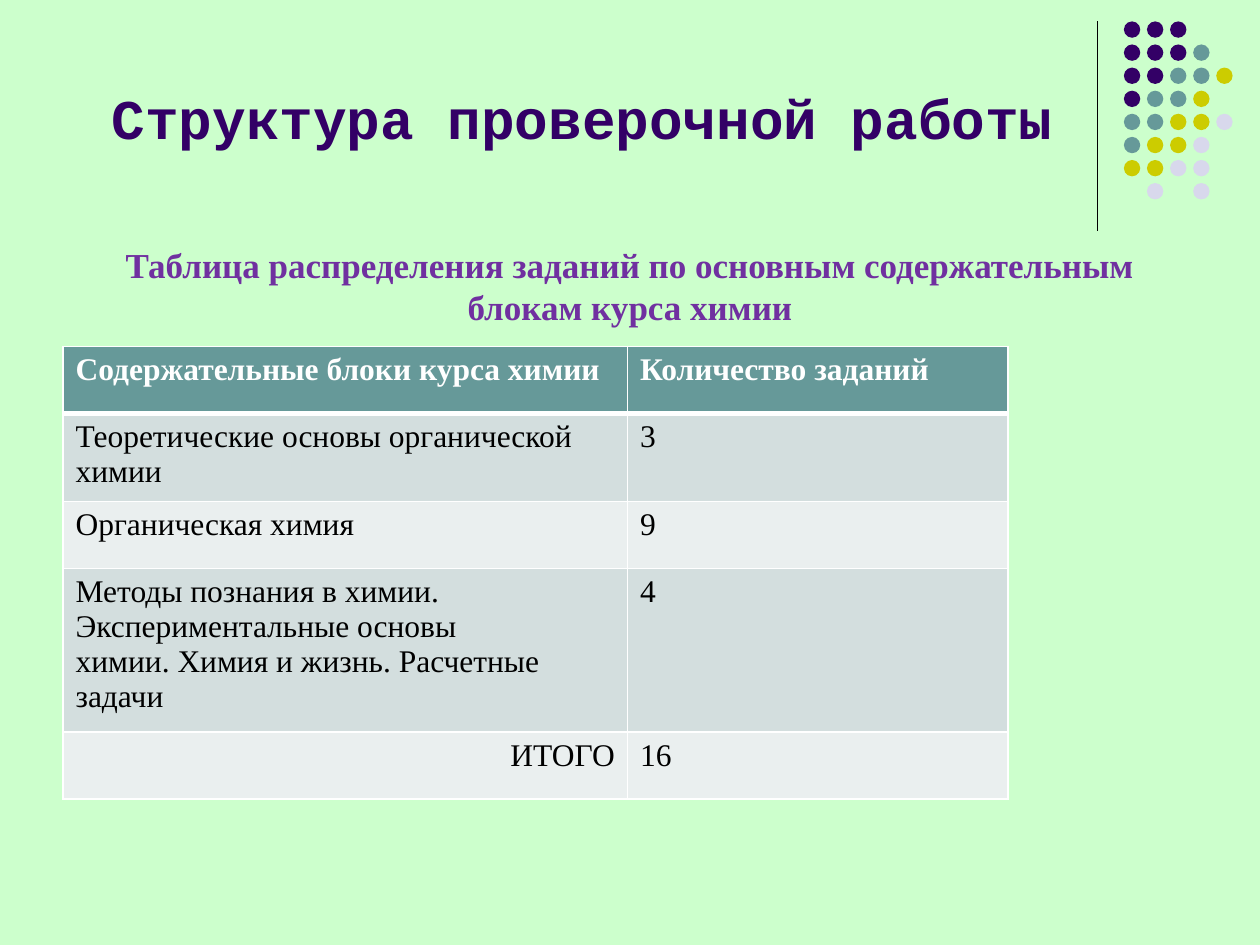
from lxml.etree import SubElement
from pptx import Presentation
from pptx.dml.color import RGBColor
from pptx.enum.shapes import MSO_CONNECTOR, MSO_SHAPE
from pptx.enum.text import MSO_ANCHOR as ANCHOR, MSO_AUTO_SIZE as AUTO, PP_ALIGN as AL
from pptx.oxml.ns import qn
from pptx.util import Inches, Pt

COLORS = {
    "bg": "CCFFCC", "title": "330066", "subtitle": "7030A0", "text": "000000",
    "white": "FFFFFF", "header": "669999", "band_dark": "D3DEDE", "band_light": "EAEFEF",
    "P": "330066", "T": "669999", "Y": "CCCC00", "L": "D8D8EC",
}
DOTS = ["PPP", "PPPT", "PPTTY", "PTTY", "TTYYL", "TYYL", "YYLL", " L L"]
DOT_PITCH = 0.55 / 3
ROWS = [
    ("Содержательные блоки курса химии", "Количество заданий"),
    ("Теоретические основы органической химии", "3"),
    ("Органическая химия", "9"),
    ("Методы познания в химии. Экспериментальные основы\n"
     "химии. Химия и жизнь. Расчетные задачи", "4"),
    ("ИТОГО", "16"),
]


def rgb(name):
    return RGBColor.from_string(COLORS[name])


def write(tf, text, font="Times New Roman", size=18, color="text", bold=False,
          align=AL.LEFT, before=0):
    tf.word_wrap = True
    for i, line in enumerate(text.split("\n")):
        p = tf.paragraphs[0] if i == 0 else tf.add_paragraph()
        p.alignment = align
        p.space_before = Pt(before)
        r = p.add_run()
        r.text = line
        r.font.name, r.font.size, r.font.bold = font, Pt(size), bold
        r.font.color.rgb = rgb(color)


def set_borders(cell, widths):
    tc_pr = cell._tc.get_or_add_tcPr()
    for side, width in widths.items():
        ln = SubElement(tc_pr, qn(f"a:ln{side}"), w=str(Pt(width)))
        fill = SubElement(ln, qn("a:solidFill"))
        SubElement(fill, qn("a:srgbClr"), val=COLORS["white"])


class SlideBuilder:
    def __init__(self, prs):
        self.s = prs.slides.add_slide(prs.slide_layouts[5])
        self.s.background.fill.solid()
        self.s.background.fill.fore_color.rgb = rgb("bg")

    def title(self, text, x, y, w, h):
        sp = self.s.shapes.title
        sp.left, sp.top, sp.width, sp.height = map(Inches, (x, y, w, h))
        sp.text_frame.auto_size = AUTO.NONE
        sp.text_frame.vertical_anchor = ANCHOR.BOTTOM
        write(sp.text_frame, text, font="Courier New", size=32, color="title",
              bold=True, align=AL.CENTER)

    def text(self, text, x, y, w, h, **fmt):
        sp = self.s.shapes.add_textbox(*map(Inches, (x, y, w, h)))
        write(sp.text_frame, text, **fmt)

    def line(self, x1, y1, x2, y2, width=0.75):
        ln = self.s.shapes.add_connector(
            MSO_CONNECTOR.STRAIGHT, *map(Inches, (x1, y1, x2, y2)))
        ln.line.width = Pt(width)
        ln.line.color.rgb = rgb("text")
        SubElement(ln._element.spPr, qn("a:effectLst"))

    def dots(self, x, y, size):
        group = self.s.shapes.add_group_shape()
        for j, row in enumerate(DOTS):
            for i, key in enumerate(row):
                if key == " ":
                    continue
                sp = group.shapes.add_shape(
                    MSO_SHAPE.OVAL, Inches(x + i * DOT_PITCH), Inches(y + j * DOT_PITCH),
                    Inches(size), Inches(size))
                sp.shadow.inherit = False
                sp.fill.solid()
                sp.fill.fore_color.rgb = rgb(key)
                sp.line.fill.background()

    def table(self, rows, x, y, col_widths, row_height):
        table = self.s.shapes.add_table(
            len(rows), len(col_widths), Inches(x), Inches(y),
            Inches(sum(col_widths)), Inches(row_height * len(rows))).table
        for col, width in zip(table.columns, col_widths):
            col.width = Inches(width)
        for i, row in enumerate(rows):
            table.rows[i].height = Inches(row_height)
            head = i == 0
            fill = "header" if head else "band_dark" if i % 2 else "band_light"
            for j, text in enumerate(row):
                cell = table.cell(i, j)
                set_borders(cell, {"L": 1, "R": 1, "T": 3 if i == 1 else 1, "B": 3 if head else 1})
                cell.fill.solid()
                cell.fill.fore_color.rgb = rgb(fill)
                total = i == len(rows) - 1 and j == 0
                write(cell.text_frame, text, color="white" if head else "text",
                      bold=head, align=AL.RIGHT if total else AL.LEFT)


def main():
    prs = Presentation()
    prs.slide_width, prs.slide_height = Inches(10), Inches(7.5)
    slide = SlideBuilder(prs)
    slide.line(8.71, 0.17, 8.71, 1.83)
    slide.dots(8.92, 0.17, 0.13)
    slide.title("Структура проверочной работы", 0.5, 0.13, 8.25, 1.12)
    slide.text("Таблица распределения заданий по основным содержательным блокам курса химии",
               0.5, 1.88, 9, 4.82, size=20, color="subtitle", bold=True,
               align=AL.CENTER, before=4)
    slide.table(ROWS, 0.5, 2.75, (4.48, 3.02), 0.53)
    prs.save("out.pptx")


if __name__ == "__main__":
    main()
